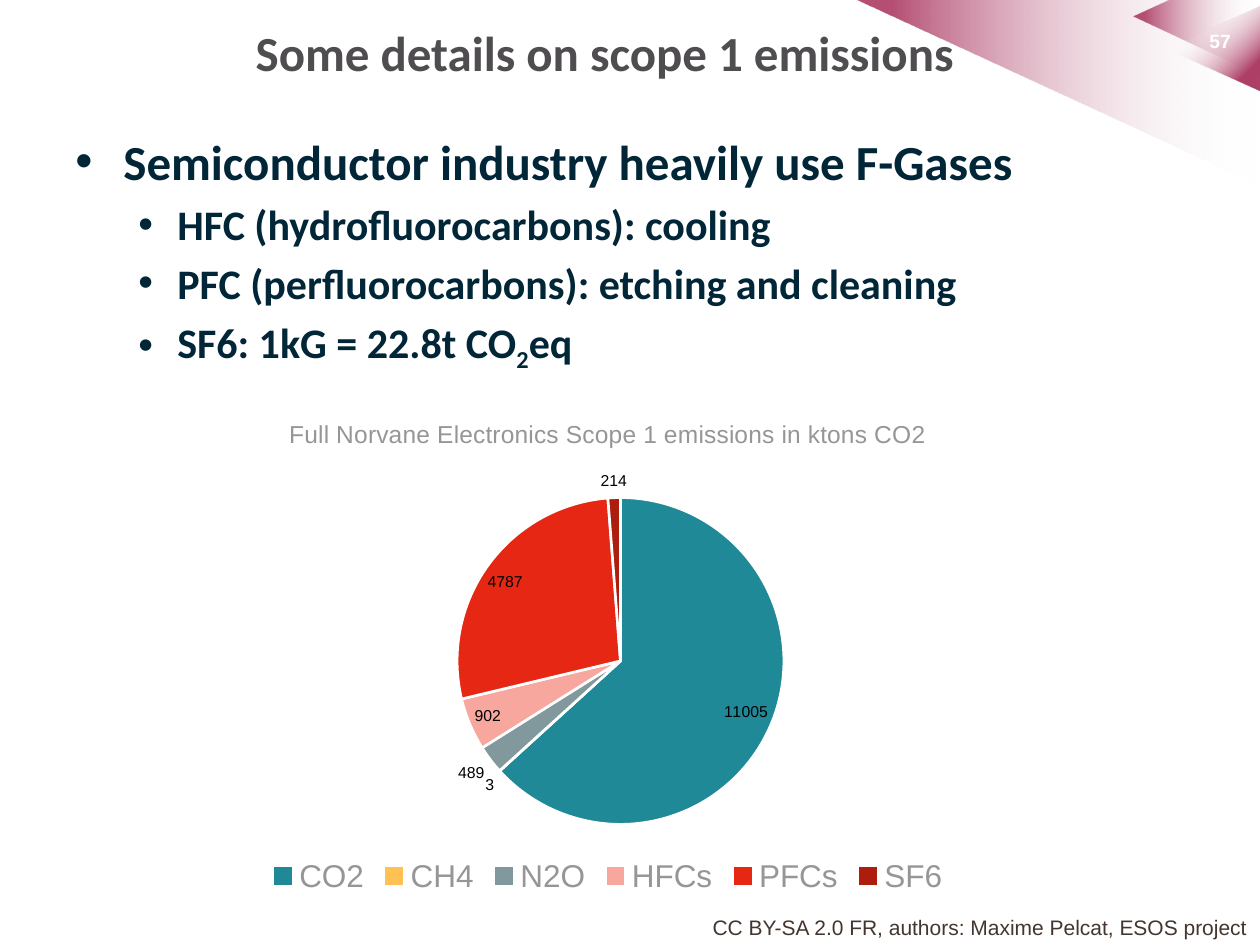
import pptx
import pptx.chart.data
import pptx.dml.color
import pptx.enum.chart
import pptx.enum.shapes
import pptx.enum.text
import pptx.oxml.ns
import pptx.util
from lxml import etree

UNIT = 914400 / 126
INK = {
    "white": "FFFFFF", "wine": "9D1747", "title": "4F4D50", "body": "002638",
    "foot": "433630", "grey": "979696", "black": "000000",
}
GASES = {
    "CO2": (11005, "208998"), "CH4": (3, "FFC154"), "N2O": (489, "81989C"),
    "HFCs": (902, "F7A79E"), "PFCs": (4787, "E52713"), "SF6": (214, "AC1D0E"),
}
LEVELS = [
    {"size": 28, "left": 48, "hang": 48},
    {"size": 24, "left": 102, "hang": 39},
]
ITEMS = [
    (0, ["Semiconductor industry heavily use F-Gases"]),
    (1, ["HFC (hydrofluorocarbons): cooling"]),
    (1, ["PFC (perfluorocarbons): etching and cleaning"]),
    (1, ["SF6: 1kG = 22.8t CO", "2", "eq"]),
]


def px(num):
    """Turn px into EMU."""
    return pptx.util.Emu(round(num * UNIT))


def rgb(code):
    """Give the colour of a hex string."""
    return pptx.dml.color.RGBColor.from_string(code)


def style(font, size, ink, name="Arial", bold=False):
    """Set the look of a font."""
    vals = {"size": pptx.util.Pt(size), "name": name, "bold": bold}
    for key, val in vals.items():
        setattr(font, key, val)
    font.color.rgb = rgb(INK[ink])


def place(shape, box):
    """Move and size a shape."""
    for key, val in zip(("left", "top", "width", "height"), box):
        setattr(shape, key, px(val))


def fade(shape, angle, start, end, alpha):
    """Fill a shape with a fade from clear white to wine."""
    shape.shadow.inherit = False
    shape.line.fill.background()
    shape.fill.gradient()
    shape.fill.gradient_angle = angle
    stops = [("white", start, 0), ("wine", end, alpha)]
    for stop, (ink, pos, part) in zip(shape.fill.gradient_stops, stops):
        stop.color.rgb = rgb(INK[ink])
        stop.position = pos / 100
    tag = pptx.oxml.ns.qn
    for node, (_, _, part) in zip(shape._element.iter(tag("a:srgbClr")), stops):
        etree.SubElement(node, tag("a:alpha"), val=str(part * 1000))


def wedge(slide, spots, alpha):
    """Draw a fading corner outline."""
    pen = slide.shapes.build_freeform(*spots[0], scale=UNIT)
    pen.add_line_segments(spots[1:], close=True)
    fade(pen.convert_to_shape(), 180, 1, 91, alpha)


def arrow(slide):
    """Draw the small corner triangle."""
    kind = pptx.enum.shapes.MSO_SHAPE.ISOSCELES_TRIANGLE
    shape = slide.shapes.add_shape(kind, px(1171), px(1), px(86), px(95))
    shape.rotation = 270
    fade(shape, 225, 27, 81, 82)


def label(slide, box, text, size, ink, bold=False, right=False):
    """Add one line of text."""
    frame = slide.shapes.add_textbox(*map(px, box)).text_frame
    frame.word_wrap = not right
    para = frame.paragraphs[0]
    if right:
        para.alignment = pptx.enum.text.PP_ALIGN.RIGHT
    run = para.add_run()
    run.text = text
    style(run.font, size, ink, bold=bold)


def head(slide, text):
    """Fill the title and bring it to the front."""
    shape = slide.shapes.title
    place(shape, (243, 13, 891, 78))
    frame = shape.text_frame
    frame.text = text
    vals = {
        "auto_size": pptx.enum.text.MSO_AUTO_SIZE.NONE,
        "vertical_anchor": pptx.enum.text.MSO_ANCHOR.MIDDLE,
        "word_wrap": True,
    }
    for key, val in vals.items():
        setattr(frame, key, val)
    para = frame.paragraphs[0]
    para.alignment = pptx.enum.text.PP_ALIGN.LEFT
    style(para.runs[0].font, 28, "title", "Calibri", True)
    slide.shapes._spTree.append(shape._element)


def bullet(para, level, parts):
    """Write a bulleted line, its second part as a subscript."""
    form = LEVELS[level]
    para.level = level
    props = para._p.get_or_add_pPr()
    props.set("marL", str(px(form["left"])))
    props.set("indent", str(-px(form["hang"])))
    tag = pptx.oxml.ns.qn
    etree.SubElement(props, tag("a:buFont"), typeface="Arial")
    etree.SubElement(props, tag("a:buChar"), char="•")
    for num, part in enumerate(parts):
        run = para.add_run()
        run.text = part
        style(run.font, form["size"], "body", "Calibri", True)
        if num == 1:
            run._r.get_or_add_rPr().set("baseline", "-25000")


def points(slide, items):
    """Add the bulleted list."""
    frame = slide.shapes.add_textbox(*map(px, (63, 125, 1134, 260))).text_frame
    frame.word_wrap = True
    for num, (level, parts) in enumerate(items):
        para = frame.add_paragraph() if num else frame.paragraphs[0]
        bullet(para, level, parts)
        if num:
            para.space_before = pptx.util.Pt(LEVELS[level]["size"] * 0.2)


def layout(plot):
    """Fix the place of the pie inside its chart."""
    tag = pptx.oxml.ns.qn
    area = plot._element.getparent()
    old = area.find(tag("c:layout"))
    if old is not None:
        area.remove(old)
    outer = etree.Element(tag("c:layout"))
    area.insert(0, outer)
    node = etree.SubElement(outer, tag("c:manualLayout"))
    vals = {
        "layoutTarget": "inner", "xMode": "edge", "yMode": "edge",
        "x": 0.32, "y": 0.2, "w": 0.39, "h": 0.65,
    }
    for key, val in vals.items():
        etree.SubElement(node, tag("c:" + key), val=str(val))


def pie(slide, title):
    """Add the pie chart of gases."""
    data = pptx.chart.data.CategoryChartData()
    data.categories = list(GASES)
    data.add_series("Series 1", [val for val, _ in GASES.values()])
    kind = pptx.enum.chart.XL_CHART_TYPE.PIE
    box = map(px, (189, 397, 838, 503))
    chart = slide.shapes.add_chart(kind, *box, data).chart
    style(chart.font, 10, "grey")
    chart.has_title = True
    frame = chart.chart_title.text_frame
    frame.text = title
    style(frame.paragraphs[0].runs[0].font, 14, "grey")
    chart.has_legend = True
    chart.legend.position = pptx.enum.chart.XL_LEGEND_POSITION.BOTTOM
    chart.legend.include_in_layout = False
    style(chart.legend.font, 18, "grey")
    plot = chart.plots[0]
    plot.vary_by_categories = True
    for num, (_, code) in enumerate(GASES.values()):
        form = plot.series[0].points[num].format
        form.fill.solid()
        form.fill.fore_color.rgb = rgb(code)
        form.line.color.rgb = rgb(INK["white"])
        form.line.width = pptx.util.Pt(1.5)
    plot.has_data_labels = True
    tags = plot.data_labels
    tags.show_value = True
    tags.position = pptx.enum.chart.XL_LABEL_POSITION.BEST_FIT
    style(tags.font, 9, "black")
    layout(plot)


def main():
    """Build the slide."""
    deck = pptx.Presentation()
    deck.slide_width, deck.slide_height = px(1260), px(945)
    slide = deck.slides.add_slide(deck.slide_layouts[5])
    wedge(slide, [(1260, 185), (856, 0), (1260, 0)], 75)
    wedge(slide, [(1260, 76), (1134, 17), (1171, 0), (1260, 0)], 73)
    arrow(slide)
    label(slide, (1197, 23, 63, 50), "57", 11, "white", bold=True)
    label(slide, (694, 908, 566, 38),
          "CC BY-SA 2.0 FR, authors: Maxime Pelcat, ESOS project",
          12, "foot", right=True)
    head(slide, "Some details on scope 1 emissions")
    points(slide, ITEMS)
    pie(slide, "Full Norvane Electronics Scope 1 emissions in ktons CO2")
    deck.save("out.pptx")


if __name__ == "__main__":
    main()
